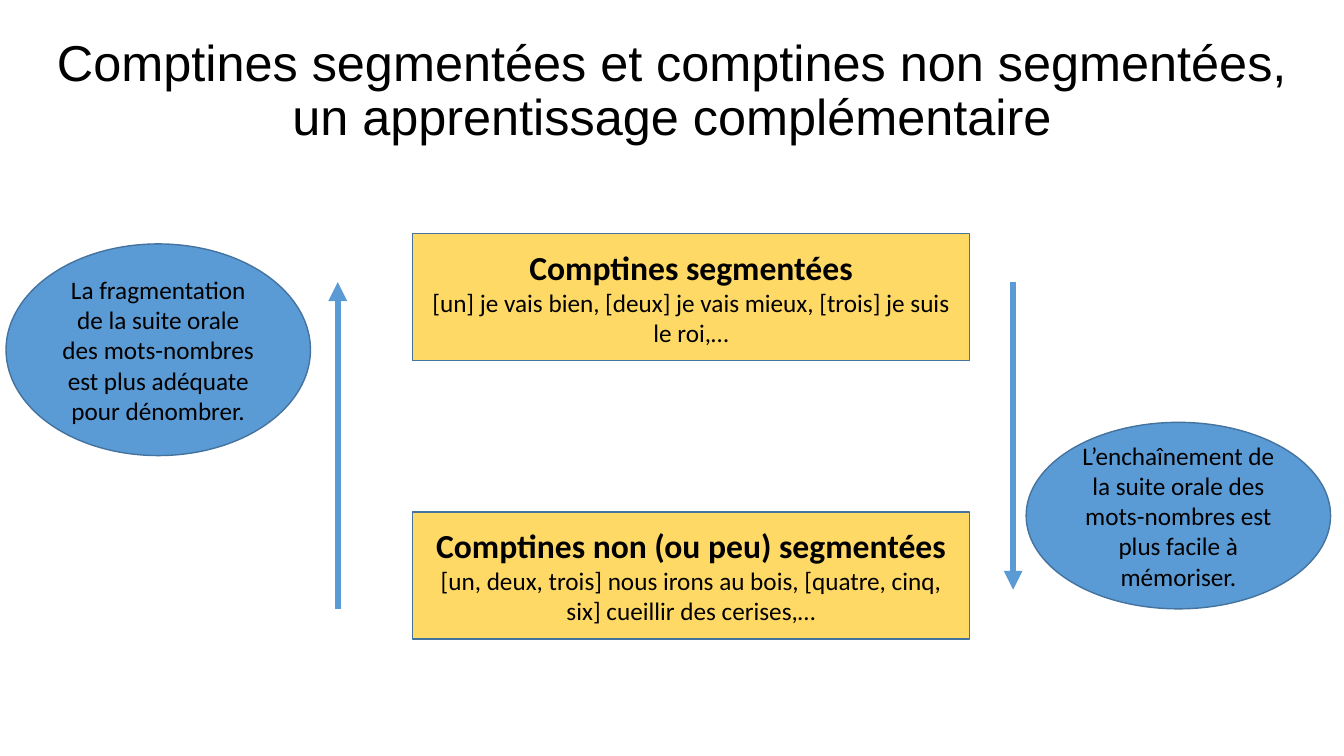
from lxml import etree
from pptx import Presentation
from pptx import util as u
from pptx.dml.color import RGBColor
from pptx.enum import shapes, text
from pptx.oxml.ns import qn

BLACK = RGBColor(0x00, 0x00, 0x00)
GOLD = RGBColor(0xFF, 0xD9, 0x66)
BLUE = RGBColor(0x5B, 0x9B, 0xD5)
EDGE = RGBColor(0x43, 0x73, 0x9E)
RECT = shapes.MSO_SHAPE.RECTANGLE
OVAL = shapes.MSO_SHAPE.OVAL

deck = Presentation()
deck.slide_width, deck.slide_height = u.Inches(13.33), u.Inches(7.5)
slide = deck.slides.add_slide(deck.slide_layouts[6])


def place(*shares):
    """Turn percentages of the slide (x, y, x, y) into lengths."""
    sides = (deck.slide_width, deck.slide_height) * 2
    return [u.Emu(round(side * share / 100)) for side, share in zip(sides, shares)]


def write(shape, lines, face="Calibri"):
    """Fill a shape with centred lines, each given as (words, size, bold)."""
    frame = shape.text_frame
    frame.word_wrap = True
    frame.vertical_anchor = text.MSO_ANCHOR.MIDDLE
    frame.text = "\n".join(line[0] for line in lines)
    for para, (_, size, bold) in zip(frame.paragraphs, lines):
        para.alignment = text.PP_ALIGN.CENTER
        font = para.runs[0].font
        font.name, font.size, font.bold = face, u.Pt(size), bold
        font.color.rgb = BLACK


title = slide.shapes.add_textbox(*place(1.8, 2.8, 96.4, 18.8))
write(title, [("Comptines segmentées et comptines non segmentées, "
               "un apprentissage complémentaire", 36, False)], "Arial")
title.text_frame.paragraphs[0].line_spacing = 0.9

left, width, tall = 30.68, 41.48, 16.8
cards = [
    (RECT, GOLD, (left, 30.93, width, tall), [
        ("Comptines segmentées", 24, True),
        ("[un] je vais bien, [deux] je vais mieux, [trois] je suis le roi,…", 18, False)]),
    (RECT, GOLD, (left, 67.73, width, tall), [
        ("Comptines non (ou peu) segmentées", 24, True),
        ("[un, deux, trois] nous irons au bois, [quatre, cinq, six] "
         "cueillir des cerises,…", 18, False)]),
    (OVAL, BLUE, (76.35, 55.87, 22.65, 24.67), [
        ("L’enchaînement de la suite orale des mots-nombres est plus facile "
         "à mémoriser.", 18, False)]),
    (OVAL, BLUE, (0.45, 32.27, 22.65, 28), [
        ("La fragmentation de la suite orale des mots-nombres est plus adéquate "
         "pour dénombrer.", 18, False)]),
]
for kind, fill, spot, lines in cards:
    card = slide.shapes.add_shape(kind, *place(*spot))
    card.shadow.inherit = False
    card.fill.solid()
    card.fill.fore_color.rgb = fill
    card.line.color.rgb = EDGE
    card.line.width = u.Pt(1)
    write(card, lines)

top = 37.33
for x, start, end in [(25.13, 80.53, top), (75.38, top, 78)]:
    arrow = slide.shapes.add_connector(shapes.MSO_CONNECTOR.STRAIGHT,
                                       *place(x, start, x, end))
    arrow.line.color.rgb = BLUE
    arrow.line.width = u.Pt(4.5)
    etree.SubElement(arrow.line._get_or_add_ln(), qn("a:tailEnd"), type="triangle")
    etree.SubElement(arrow._element.spPr, qn("a:effectLst"))

deck.save("out.pptx")
